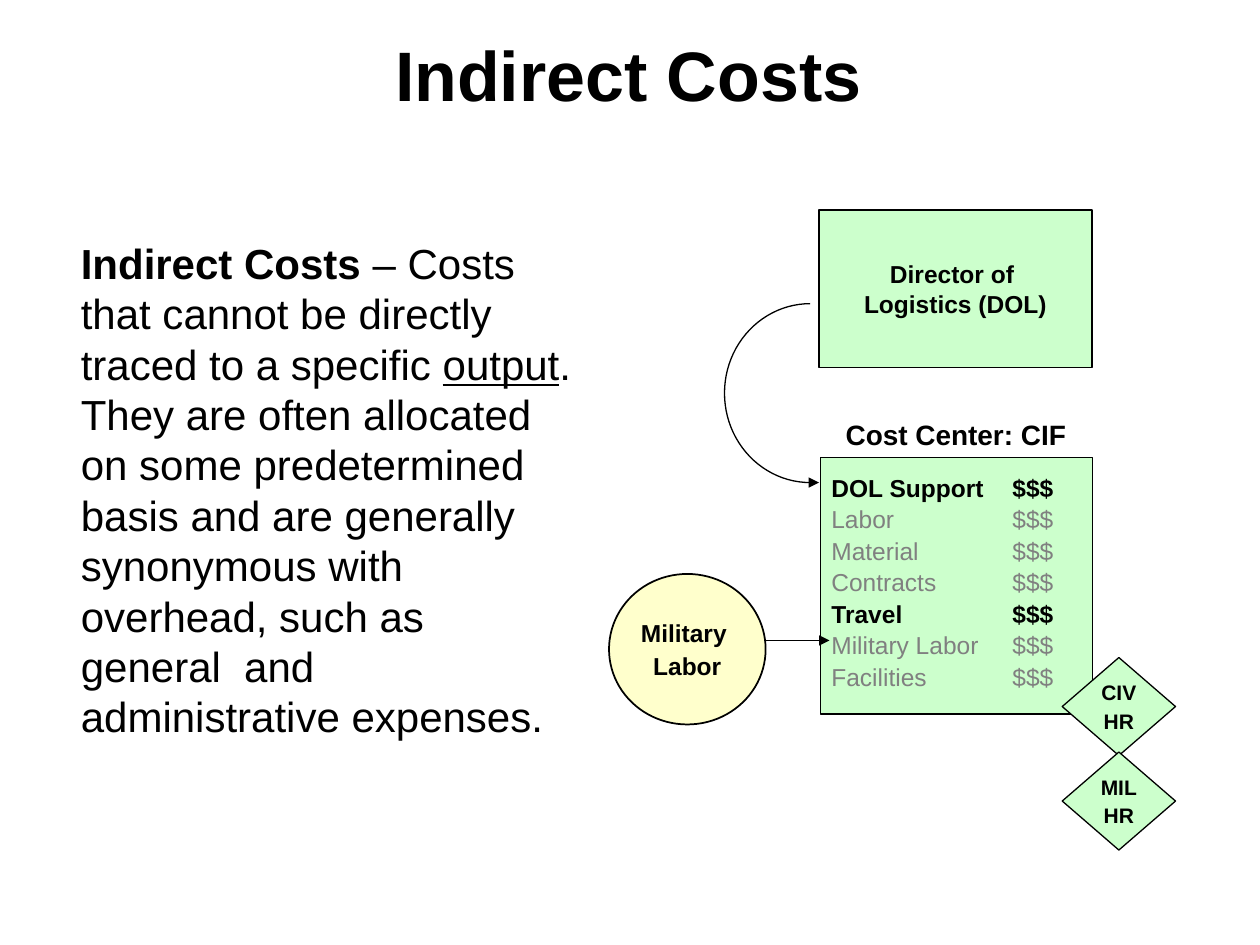
from pptx import Presentation
from pptx.dml.color import RGBColor
from pptx.enum.shapes import MSO_CONNECTOR, MSO_SHAPE
from pptx.enum.text import MSO_ANCHOR, MSO_AUTO_SIZE, PP_ALIGN
from pptx.oxml.ns import qn
from pptx.util import Pt
from lxml.etree import SubElement

BLACK, GRAY, GREEN, YELLOW = "000000", "808080", "CCFFCC", "FFFFCC"
LINE_HEIGHT = 1.2

COSTS = ["DOL Support", "Labor", "Material", "Contracts",
         "Travel", "Military Labor", "Facilities"]
HIGHLIGHTED = {"DOL Support", "Travel"}


def color(value):
    return RGBColor.from_string(value)


def place(shape, left, top, width, height):
    box = {"left": left, "top": top, "width": width, "height": height}
    for name, value in box.items():
        setattr(shape, name, Pt(value))


def format_frame(frame, wrap=True, anchor=MSO_ANCHOR.TOP, inset=3.6):
    values = {"word_wrap": wrap, "vertical_anchor": anchor,
              "auto_size": MSO_AUTO_SIZE.NONE,
              "margin_left": Pt(7.2), "margin_right": Pt(7.2),
              "margin_top": Pt(inset), "margin_bottom": Pt(inset)}
    for name, value in values.items():
        setattr(frame, name, value)


def format_paragraph(paragraph, size, align=PP_ALIGN.LEFT, after=0):
    values = {"alignment": align, "line_spacing": Pt(size * LINE_HEIGHT),
              "space_before": Pt(0), "space_after": Pt(after)}
    for name, value in values.items():
        setattr(paragraph, name, value)


def add_run(paragraph, text, size, bold=True, underline=False, ink=BLACK):
    run = paragraph.add_run()
    run.text = text
    values = {"name": "Arial", "size": Pt(size), "bold": bold,
              "underline": underline}
    for name, value in values.items():
        setattr(run.font, name, value)
    run.font.color.rgb = color(ink)


def write_lines(frame, lines, size, after=0):
    """Write centred bold lines, one paragraph each."""
    for index, line in enumerate(lines):
        paragraph = frame.add_paragraph() if index else frame.paragraphs[0]
        format_paragraph(paragraph, size, PP_ALIGN.CENTER, after)
        add_run(paragraph, line, size)


def add_node(slide, kind, box, fill, lines=(), size=14, after=0, weight=0.75):
    shape = slide.shapes.add_shape(kind, *map(Pt, box))
    shape.shadow.inherit = False
    shape.fill.solid()
    shape.fill.fore_color.rgb = color(fill)
    shape.line.color.rgb = color(BLACK)
    shape.line.width = Pt(weight)
    format_frame(shape.text_frame, wrap=False, anchor=MSO_ANCHOR.MIDDLE)
    write_lines(shape.text_frame, lines, size, after)


def add_arrow(slide, start_x, end_x, y, weight):
    connector = slide.shapes.add_connector(
        MSO_CONNECTOR.STRAIGHT, Pt(start_x), Pt(y), Pt(end_x), Pt(y))
    connector.line.color.rgb = color(BLACK)
    connector.line.width = Pt(weight)
    SubElement(connector.line._get_or_add_ln(), qn("a:tailEnd"), type="triangle")
    SubElement(connector._element.spPr, qn("a:effectLst"))


def add_arc(slide, box):
    """Draw the left half of an ellipse."""
    arc = slide.shapes.add_shape(MSO_SHAPE.ARC, *map(Pt, box))
    arc.shadow.inherit = False
    arc.adjustments[0] = 54   # 90 degrees
    arc.adjustments[1] = 162  # 270 degrees
    arc.fill.background()
    arc.line.color.rgb = color(BLACK)
    arc.line.width = Pt(0.75)


def add_cost_row(slide, label, top):
    box = slide.shapes.add_textbox(Pt(468), Pt(top), Pt(174), Pt(16.8))
    format_frame(box.text_frame, inset=0)
    paragraph = box.text_frame.paragraphs[0]
    format_paragraph(paragraph, 14)
    tabs = SubElement(paragraph._p.get_or_add_pPr(), qn("a:tabLst"))
    SubElement(tabs, qn("a:tab"), pos=str(Pt(103.5)), algn="l")
    bold = label in HIGHLIGHTED
    add_run(paragraph, label + "\t$$$", 14, bold, ink=BLACK if bold else GRAY)


def fill_title(title):
    place(title, 95, 18, 528, 65.5)
    format_frame(title.text_frame, inset=0)
    write_lines(title.text_frame, ["Indirect Costs"], 40)


def fill_definition(body):
    place(body, 12, 132, 324, 192)
    format_frame(body.text_frame)
    paragraph = body.text_frame.paragraphs[0]
    format_paragraph(paragraph, 24)
    properties = paragraph._p.get_or_add_pPr()
    properties.set("marL", str(Pt(27)))
    properties.set("indent", str(Pt(-27)))
    SubElement(properties, qn("a:buNone"))
    add_run(paragraph, "\tIndirect Costs", 24)
    add_run(paragraph, " – Costs that cannot be directly traced to a specific ",
            24, bold=False)
    add_run(paragraph, "output", 24, bold=False, underline=True)
    add_run(paragraph, ". They are often allocated on some predetermined basis "
            "and are generally synonymous with overhead, such as general  and "
            "administrative expenses.", 24, bold=False)


def main():
    presentation = Presentation()
    presentation.slide_width, presentation.slide_height = Pt(720), Pt(540)
    slide = presentation.slides.add_slide(presentation.slide_layouts[1])

    # Title and definition
    fill_title(slide.shapes.title)
    fill_definition(slide.placeholders[1])

    # Cost center with its heading
    add_node(slide, MSO_SHAPE.RECTANGLE, (468.75, 261.5, 155.5, 146.5), GREEN)
    heading = slide.shapes.add_textbox(Pt(474), Pt(235), Pt(144.5), Pt(26.5))
    format_frame(heading.text_frame)
    write_lines(heading.text_frame, ["Cost Center: CIF"], 16, after=2)

    # Sources of indirect cost
    add_node(slide, MSO_SHAPE.OVAL, (348, 328, 89.5, 86), YELLOW,
             ["Military ", "Labor"], after=2, weight=1)
    add_node(slide, MSO_SHAPE.RECTANGLE, (468, 120, 156, 90), GREEN,
             ["Director of ", "Logistics (DOL)"])
    for index, name in enumerate(["CIV", "MIL"]):
        add_node(slide, MSO_SHAPE.DIAMOND, (607, 375.75 + 54 * index, 64.75, 56),
                 GREEN, [name, "HR"], size=12, after=2)

    # Flows into the cost center
    add_arc(slide, (414, 173.5, 98, 102.25))
    add_arrow(slide, 462, 468, 275.75, 0.75)
    add_arrow(slide, 437.5, 474, 366, 1)

    # Cost lines
    for index, label in enumerate(COSTS):
        add_cost_row(slide, label, 270 + 18 * index)

    presentation.save("out.pptx")


if __name__ == "__main__":
    main()
